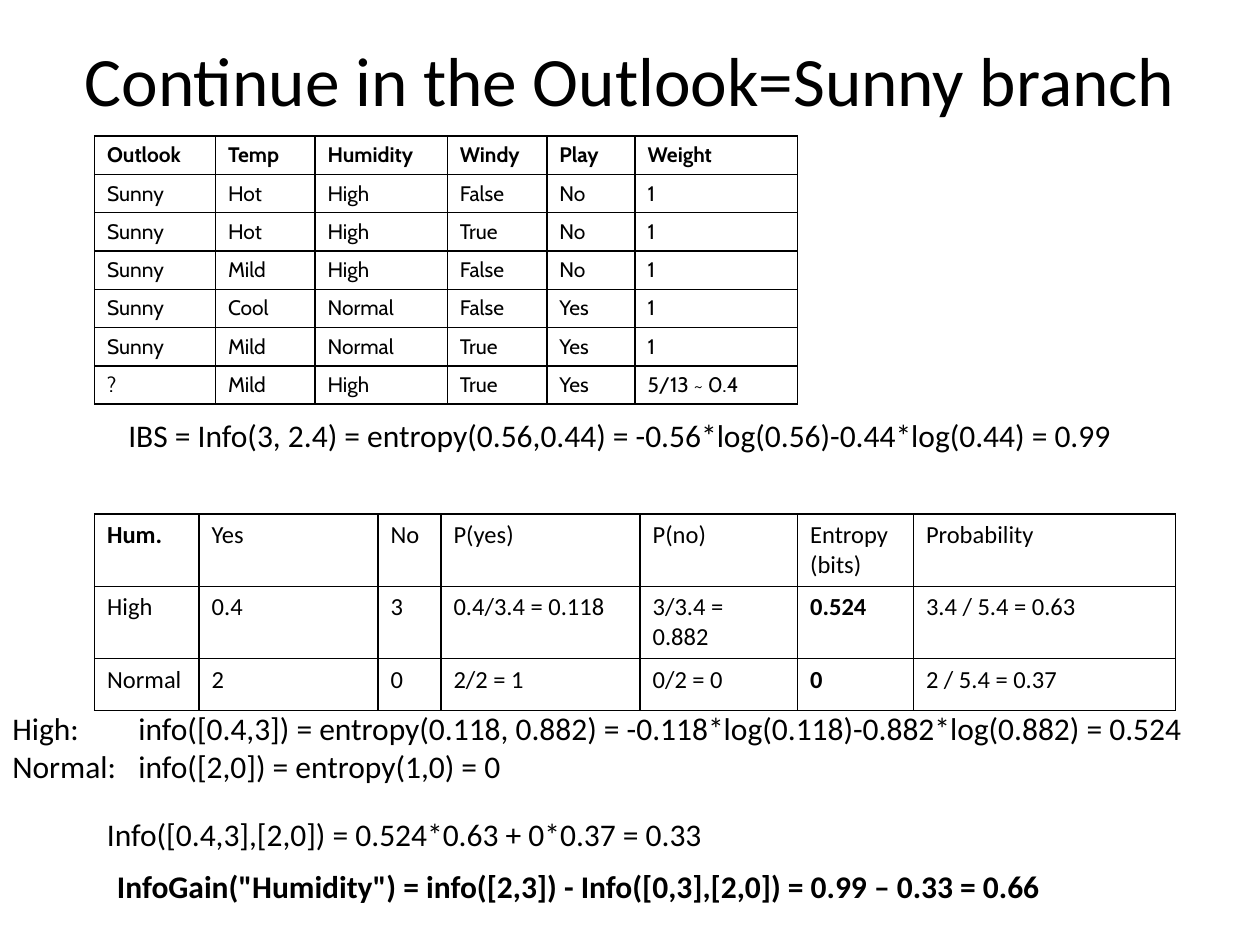
import pptx
import pptx.dml.color
import pptx.enum.text
import pptx.oxml.ns
import pptx.util
from lxml import etree

Inches = pptx.util.Inches
Pt = pptx.util.Pt
COLORS = {"ink": "000000"}
INK = pptx.dml.color.RGBColor.from_string(COLORS["ink"])

WEIGHTED_ROWS = [
    ["Outlook", "Temp", "Humidity", "Windy", "Play", "Weight"],
    ["Sunny", "Hot", "High", "False", "No", "1"],
    ["Sunny", "Hot", "High", "True", "No", "1"],
    ["Sunny", "Mild", "High", "False", "No", "1"],
    ["Sunny", "Cool", "Normal", "False", "Yes", "1"],
    ["Sunny", "Mild", "Normal", "True", "Yes", "1"],
    ["?", "Mild", "High", "True", "Yes", "5/13 ~ 0.4"],
]
HUMIDITY_ROWS = [
    ["Hum.", "Yes", "No", "P(yes)", "P(no)", "Entropy\v(bits)", "Probability"],
    ["High", "0.4", "3", "0.4/3.4 = 0.118", "3/3.4 = 0.882", "0.524", "3.4 / 5.4 = 0.63"],
    ["Normal", "2", "0", "2/2 = 1", "0/2 = 0", "0", "2 / 5.4 = 0.37"],
]
FORMULAS = [
    ((0.92, 3.25, 8.09, 0.4), False, False,
     ["IBS = Info(3, 2.4) = entropy(0.56,0.44) = -0.56*log(0.56)-0.44*log(0.44) = 0.99"]),
    ((0, 5.58, 9.67, 0.71), True, False,
     ["High: \tinfo([0.4,3]) = entropy(0.118, 0.882) = -0.118*log(0.118)-0.882*log(0.882) = 0.524",
      "Normal:\tinfo([2,0]) = entropy(1,0) = 0"]),
    ((0.75, 6.42, 4.98, 0.4), False, False,
     ["Info([0.4,3],[2,0]) = 0.524*0.63 + 0*0.37 = 0.33"]),
    ((0.83, 6.83, 7.67, 0.4), False, True,
     ['InfoGain("Humidity") = info([2,3]) - Info([0,3],[2,0]) = 0.99 – 0.33 = 0.66']),
]


def format_text(tf, size, name="Calibri", bold=False):
    values = {"size": Pt(size), "name": name, "bold": bold}
    for p in tf.paragraphs:
        for r in p.runs:
            for key, value in values.items():
                setattr(r.font, key, value)
            r.font.color.rgb = INK


def add_borders(cell):
    tcPr = cell._tc.get_or_add_tcPr()
    for side in ("lnL", "lnR", "lnT", "lnB"):
        ln = etree.SubElement(tcPr, pptx.oxml.ns.qn(f"a:{side}"), w=str(Pt(1)))
        fill = etree.SubElement(ln, pptx.oxml.ns.qn("a:solidFill"))
        etree.SubElement(fill, pptx.oxml.ns.qn("a:srgbClr"), val=COLORS["ink"])


def add_title(s, box, text):
    sp = s.shapes.title
    sp.left, sp.top, sp.width, sp.height = map(Inches, box)
    tf = sp.text_frame
    tf.text = text
    tf.vertical_anchor = pptx.enum.text.MSO_ANCHOR.MIDDLE
    tf.paragraphs[0].alignment = pptx.enum.text.PP_ALIGN.CENTER
    format_text(tf, 39.6)


def add_grid(s, left, top, rows, widths, heights, size, name, is_bold):
    sp = s.shapes.add_table(len(rows), len(widths), Inches(left), Inches(top),
                            Inches(sum(widths)), Inches(sum(heights)))
    table = sp.table
    table.first_row = table.horz_banding = False
    for column, width in zip(table.columns, widths):
        column.width = Inches(width)
    for row, height in zip(table.rows, heights):
        row.height = Inches(height)
    for i, row in enumerate(rows):
        for j, text in enumerate(row):
            cell = table.cell(i, j)
            cell.text = text
            format_text(cell.text_frame, size, name, is_bold(i, j))
            add_borders(cell)
            cell.fill.background()


def add_formula(s, box, wrap, bold, lines):
    tf = s.shapes.add_textbox(*map(Inches, box)).text_frame
    tf.word_wrap = wrap
    tf.auto_size = pptx.enum.text.MSO_AUTO_SIZE.SHAPE_TO_FIT_TEXT
    tf.text = "\n".join(lines)
    format_text(tf, 18, bold=bold)


def main():
    prs = pptx.Presentation()
    prs.slide_width, prs.slide_height = Inches(10), Inches(7.5)
    s = prs.slides.add_slide(prs.slide_layouts[5])
    add_title(s, (0.5, 0, 9, 1.25), "Continue in the Outlook=Sunny branch")
    add_grid(s, 0.75, 1.08, WEIGHTED_ROWS, [0.96, 0.79, 1.05, 0.79, 0.7, 1.29],
             [0.3] * len(WEIGHTED_ROWS), 12, "Cabin", lambda i, j: i == 0)
    add_grid(s, 0.75, 4.08, HUMIDITY_ROWS, [0.83, 1.42, 0.5, 1.58, 1.25, 0.92, 2.08],
             [0.57, 0.57, 0.41], 14, "Calibri",
             lambda i, j: (i == 0 and j == 0) or (i > 0 and j == 5))
    for formula in FORMULAS:
        add_formula(s, *formula)
    prs.save("out.pptx")


if __name__ == "__main__":
    main()
